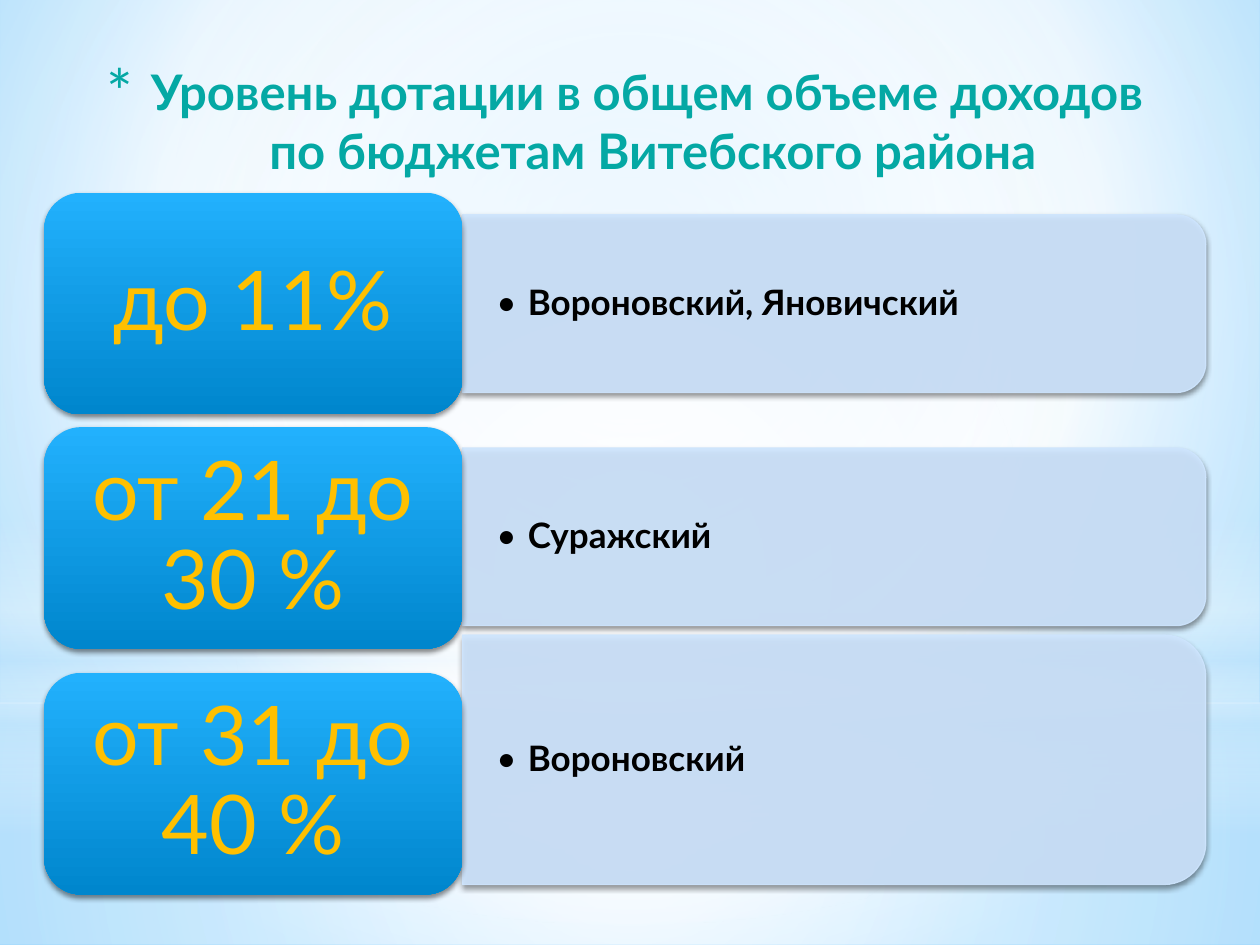
import pptx
import pptx.util
import pptx.dml.color
import pptx.enum.shapes
import pptx.enum.text
import pptx.oxml
import pptx.oxml.ns
from lxml import etree

SHAPES = pptx.enum.shapes.MSO_SHAPE
ALIGN = pptx.enum.text.PP_ALIGN
ANCHOR = pptx.enum.text.MSO_ANCHOR
IN = pptx.util.Inches
A = pptx.oxml.ns.nsdecls("a")
qn = pptx.oxml.ns.qn
W, H = 10, 7.5


def gradient(holder, stops, angle=None, focus=(50, 50, 50, 50)):
    """Replace the solid fill in holder; stops are (position, colour, opacity) in percent."""
    stop_xml = "".join(
        f'<a:gs pos="{pos * 1000}"><a:srgbClr val="{colour}"><a:alpha val="{opacity * 1000}"/></a:srgbClr></a:gs>'
        for pos, colour, opacity in stops)
    if angle is None:
        sides = " ".join(f'{side}="{share * 1000}"' for side, share in zip("ltrb", focus))
        direction = f'<a:path path="circle"><a:fillToRect {sides}/></a:path>'
    else:
        direction = f'<a:lin ang="{angle * 60000}" scaled="0"/>'
    solid = holder.find(qn("a:solidFill"))
    holder.replace(solid, pptx.oxml.parse_xml(
        f'<a:gradFill {A} rotWithShape="1"><a:gsLst>{stop_xml}</a:gsLst>{direction}</a:gradFill>'))


def style_text(frame, text, size, colour, bold, align, bullet=None, indent=0, bullet_size=100):
    frame.word_wrap = True
    frame.text = text
    paragraph = frame.paragraphs[0]
    paragraph.alignment = align
    for run in paragraph.runs:
        run.font.size = pptx.util.Pt(size)
        run.font.name = "Lato"
        run.font.bold = bold
        run.font.color.rgb = pptx.dml.color.RGBColor.from_string(colour)
    if bullet:
        props = paragraph._p.get_or_add_pPr()
        props.set("marL", str(IN(indent)))
        props.set("indent", str(-IN(indent)))
        for xml in (f'<a:buClr {A}><a:srgbClr val="{colour}"/></a:buClr>',
                    f'<a:buSzPct {A} val="{bullet_size * 1000}"/>',
                    f'<a:buFont {A} typeface="Lato"/>',
                    f'<a:buChar {A} char="{bullet}"/>'):
            props.append(pptx.oxml.parse_xml(xml))
    return paragraph


deck = pptx.Presentation()
deck.slide_width, deck.slide_height = IN(W), IN(H)
slide = deck.slides.add_slide(deck.slide_layouts[5])

# Background
slide.background.fill.solid()
gradient(slide.element.find(".//" + qn("p:bgPr")),
         [(0, "B0E0FF", 100), (60, "FFFFFF", 100), (100, "6BC5FF", 100)], focus=(20, 10, 20, 60))

# Soft light over the background: outline, top, height, stops, angle
horizon = 5.58
glows = [
    (SHAPES.RECTANGLE, horizon, H - horizon,
     [(0, "FFFFFF", 91), (37, "FFFFFF", 76), (100, "C6E7FC", 79)], None),
    (SHAPES.RECTANGLE, 0, horizon,
     [(0, "FFFFFF", 89), (48, "FFFFFF", 62), (100, "C6E7FC", 79)], None),
    (SHAPES.RECTANGLE, 4.12, H / 3,
     [(0, "FFFFFF", 0), (29, "FFFFFF", 30), (45, "C6E7FC", 40),
      (55, "FFFFFF", 26), (65, "C6E7FC", 60), (100, "FFFFFF", 0)], 90),
    (SHAPES.OVAL, 1.75, horizon, [(0, "FFFFFF", 100), (56, "FFFFFF", 0)], None),
]
for outline, top, height, stops, angle in glows:
    glow = slide.shapes.add_shape(outline, 0, IN(top), IN(W), IN(height))
    glow.shadow.inherit = False
    glow.line.fill.background()
    glow.fill.solid()
    gradient(glow.element.spPr, stops, angle)

# Title, in front of the light
title = slide.shapes.title
slide.shapes.element.append(title.element)
title.left, title.top, title.width, title.height = IN(0.2), IN(0.44), IN(9.61), IN(0.94)
title.text_frame.vertical_anchor = ANCHOR.TOP
title.text_frame.auto_size = pptx.enum.text.MSO_AUTO_SIZE.NONE
style_text(title.text_frame, "Уровень дотации в общем объеме доходов \vпо бюджетам Витебского района",
           28, "04A8A4", True, ALIGN.CENTER, "*", 0.35, 128)

# Rows: share of subsidy, councils, card centre, panel centre, panel height
rows = [
    ("до 11%", "Вороновский, Яновичский", 2.41, 2.41, 1.41),
    ("от 21 до 30 %", "Суражский", 4.27, 4.26, 1.41),
    ("от 31 до 40 %", "Вороновский", 6.22, 6.03, 1.98),
]
card_left, card_width, card_height = 0.35, 3.32, 1.76
panel_left, panel_width = card_left + card_width, 5.9
card_pad = 0.09

for share, councils, card_middle, panel_middle, panel_height in rows:
    # The panel is turned so that its rounded corners face right
    panel = slide.shapes.add_shape(
        SHAPES.ROUND_2_SAME_RECTANGLE,
        IN(panel_left + (panel_width - panel_height) / 2), IN(panel_middle - panel_width / 2),
        IN(panel_height), IN(panel_width))
    panel.rotation = 90
    panel.line.width = pptx.util.Pt(0.75)
    for paint in (panel.fill, panel.line.fill):
        paint.solid()
        paint.fore_color.rgb = pptx.dml.color.RGBColor.from_string("CEE5FE")
    for colour in panel.element.spPr.iter(qn("a:srgbClr")):
        etree.SubElement(colour, qn("a:alpha")).set("val", "90000")

    card_top = card_middle - card_height / 2
    councils_height = panel_height * 0.9
    councils_box = slide.shapes.add_textbox(
        IN(panel_left), IN(panel_middle - councils_height / 2), IN(5.83), IN(councils_height))

    card = slide.shapes.add_shape(SHAPES.ROUNDED_RECTANGLE, IN(card_left), IN(card_top),
                                  IN(card_width), IN(card_height))
    card.line.fill.background()
    card.fill.solid()
    gradient(card.element.spPr, [(0, "22B1FD", 100), (100, "0086CD", 100)], 90)
    share_box = slide.shapes.add_textbox(
        IN(card_left + card_pad), IN(card_top + card_pad),
        IN(card_width - 2 * card_pad), IN(card_height - 2 * card_pad))

    for block in (panel, card):
        block.shadow.inherit = False
        block.element.spPr.find(qn("a:effectLst")).append(pptx.oxml.parse_xml(
            f'<a:outerShdw {A} blurRad="{pptx.util.Pt(3.1)}" dist="{pptx.util.Pt(1.8)}" dir="5400000" '
            'rotWithShape="0"><a:srgbClr val="000000"><a:alpha val="45000"/></a:srgbClr></a:outerShdw>'))

    for box, side, edge in ((councils_box, 0.27, 0.14), (share_box, 0.2, 0.1)):
        frame = box.text_frame
        frame.vertical_anchor = ANCHOR.MIDDLE
        frame.margin_left = frame.margin_right = IN(side)
        frame.margin_top = frame.margin_bottom = IN(edge)
    councils_line = style_text(councils_box.text_frame, councils, 20, "000000", True,
                               ALIGN.LEFT, "•", 0.25)
    councils_line.level = 1
    share_line = style_text(share_box.text_frame, share, 47, "FFC000", False, ALIGN.CENTER)
    councils_line.line_spacing = share_line.line_spacing = 0.9

deck.save("out.pptx")
